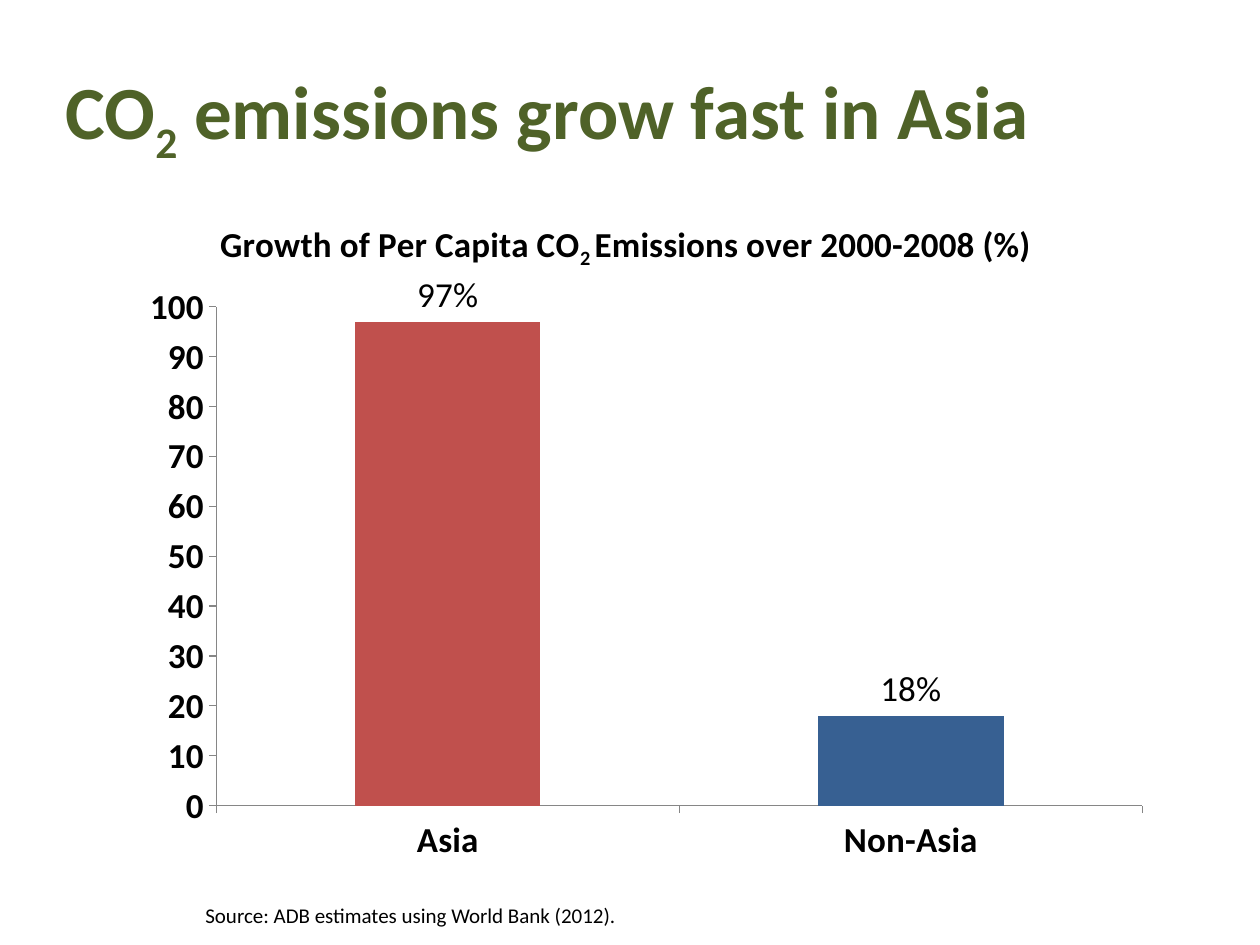
from dataclasses import dataclass
from typing import Optional

from lxml import etree
from pptx import Presentation
from pptx import util as u
from pptx.chart.data import CategoryChartData
from pptx.dml.color import RGBColor
from pptx.enum import chart as ch, text
from pptx.oxml import ns

GREEN = RGBColor(0x4F, 0x62, 0x28)
RED = RGBColor(0xC0, 0x50, 0x4D)
BLUE = RGBColor(0x37, 0x60, 0x92)
GREY = RGBColor(0x86, 0x86, 0x86)
BLACK = RGBColor(0, 0, 0)
FONT = "Calibri"


@dataclass
class Span:
    wording: str
    subscript: bool = False


@dataclass
class Label:
    left: float
    top: float
    width: float
    height: float
    spans: list[Span]
    size: float
    color: RGBColor
    bold: bool = False
    wrap: bool = True
    anchor: text.MSO_ANCHOR = text.MSO_ANCHOR.TOP


@dataclass
class Bar:
    region: str
    growth: int
    color: RGBColor


BARS = [Bar("Asia", 97, RED), Bar("Non-Asia", 18, BLUE)]
CHART_TITLE = [
    Span("Growth of Per Capita CO"),
    Span("2 ", True),
    Span("Emissions over 2000-2008 (%)"),
]
LABELS = [
    Label(1.07, 0.64, 22.86, 3.38,
          [Span("CO"), Span("2", True), Span(" emissions grow fast in Asia")],
          42.9, GREEN, bold=True, anchor=text.MSO_ANCHOR.MIDDLE),
    Label(3.89, 18.06, 8.89, 0.76,
          [Span("Source: ADB estimates using World Bank (2012).")],
          12, BLACK, wrap=False),
]


def style_font(font, size: float, color: RGBColor, bold: bool) -> None:
    font.name = FONT
    font.size = u.Pt(size)
    font.bold = bold
    font.color.rgb = color


def write_spans(para, spans: list[Span], size: float, color: RGBColor, bold: bool) -> None:
    for span in spans:
        run = para.add_run()
        run.text = span.wording
        style_font(run.font, size, color, bold)
        if span.subscript:
            run._r.get_or_add_rPr().set("baseline", "-25000")


def add_label(page, label: Label) -> None:
    box = page.shapes.add_textbox(u.Cm(label.left), u.Cm(label.top),
                                  u.Cm(label.width), u.Cm(label.height))
    frame = box.text_frame
    frame.word_wrap = label.wrap
    frame.vertical_anchor = label.anchor
    write_spans(frame.paragraphs[0], label.spans, label.size, label.color, label.bold)


def set_layout(parent, position: int, inner: bool, **fractions: float) -> None:
    for old in parent.findall(ns.qn("c:layout")):
        parent.remove(old)
    layout = etree.Element(ns.qn("c:layout"))
    manual = etree.SubElement(layout, ns.qn("c:manualLayout"))
    settings = {"layoutTarget": "inner"} if inner else {}
    settings.update(xMode="edge", yMode="edge", **fractions)
    for name, value in settings.items():
        etree.SubElement(manual, ns.qn(f"c:{name}")).set("val", str(value))
    parent.insert(position, layout)


def style_axis(axis, maximum: Optional[float] = None) -> None:
    axis.has_major_gridlines = False
    axis.major_tick_mark = ch.XL_TICK_MARK.OUTSIDE
    axis.minor_tick_mark = ch.XL_TICK_MARK.NONE
    axis.format.line.color.rgb = GREY
    axis.format.line.width = u.Pt(0.75)
    style_font(axis.tick_labels.font, 20, BLACK, True)
    if maximum is not None:
        axis.minimum_scale = 0
        axis.maximum_scale = maximum
        axis.major_unit = 10


def add_growth_chart(page, bars: list[Bar]) -> None:
    data = CategoryChartData()
    data.categories = [bar.region for bar in bars]
    data.add_series("Series 1", [bar.growth for bar in bars])
    chart = page.shapes.add_chart(ch.XL_CHART_TYPE.COLUMN_CLUSTERED, u.Cm(1.47), u.Cm(3.81),
                                  u.Cm(22.23), u.Cm(13.97), data).chart
    style_font(chart.font, 10, BLACK, False)
    chart.has_legend = False
    chart.has_title = True
    title = chart.chart_title
    write_spans(title.text_frame.paragraphs[0], CHART_TITLE, 20, BLACK, True)
    title.include_in_layout = False
    set_layout(title._element, 1, False, x=0.13, y=0.04)
    set_layout(chart._chartSpace.chart.plotArea, 0, True, x=0.13, y=0.17, w=0.84, h=0.72)
    style_axis(chart.category_axis)
    style_axis(chart.value_axis, 100)

    plot = chart.plots[0]
    plot.gap_width = 150
    plot.vary_by_categories = False
    series = plot.series[0]
    series.format.fill.solid()
    series.format.fill.fore_color.rgb = RED
    for index, bar in enumerate(bars):
        fill = series.points[index].format.fill
        fill.solid()
        fill.fore_color.rgb = bar.color
    labels = series.data_labels
    labels.show_value = True
    labels.number_format = '0"%"'
    labels.number_format_is_linked = False
    labels.position = ch.XL_LABEL_POSITION.OUTSIDE_END
    style_font(labels.font, 20, BLACK, False)


def main() -> None:
    deck = Presentation()
    deck.slide_width = u.Cm(25.4)
    deck.slide_height = u.Cm(19.05)
    page = deck.slides.add_slide(deck.slide_layouts[6])
    add_growth_chart(page, BARS)
    for label in LABELS:
        add_label(page, label)
    deck.save("out.pptx")


if __name__ == "__main__":
    main()
